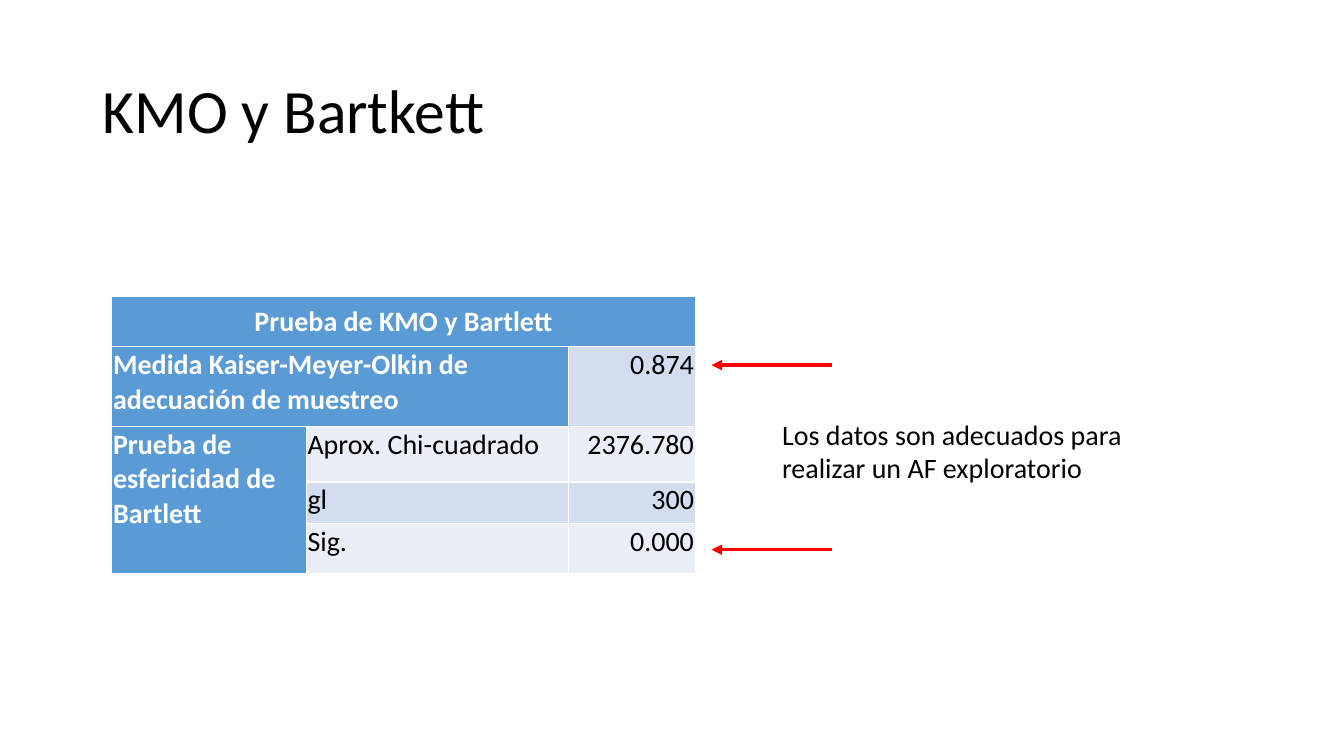
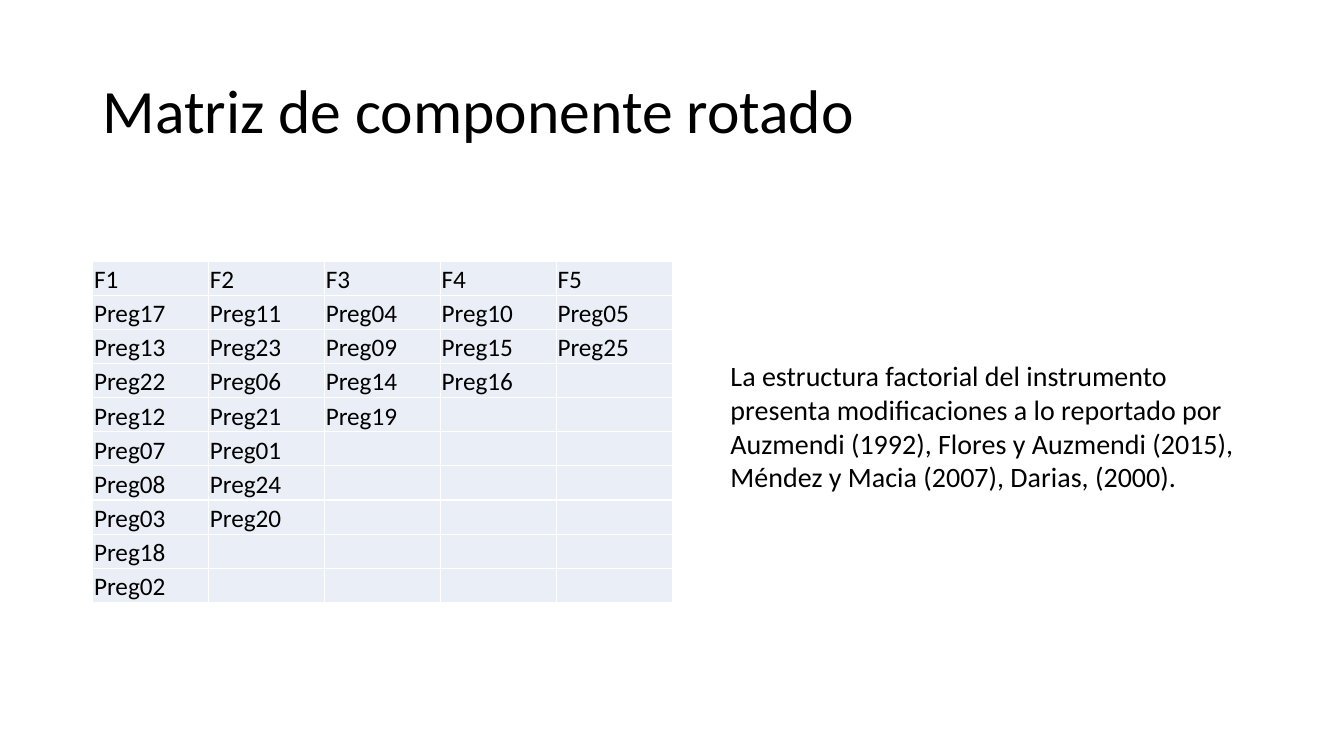
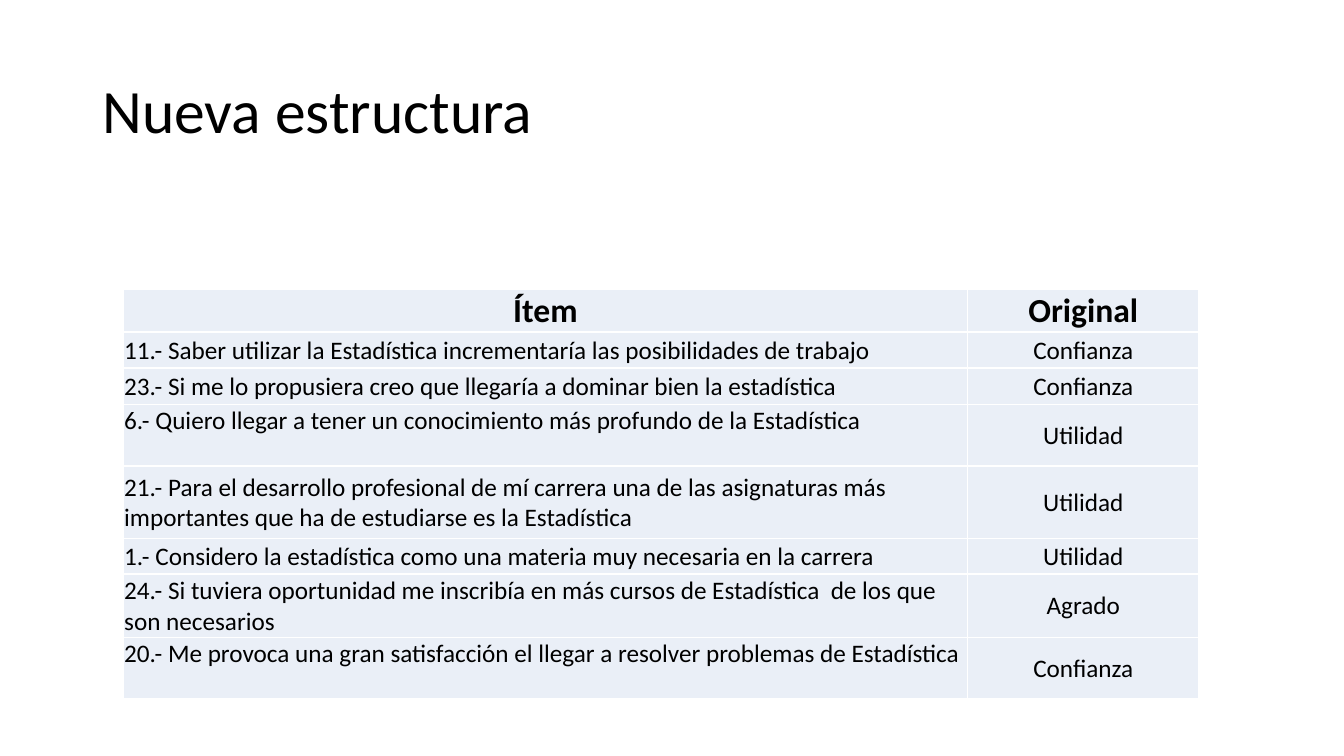
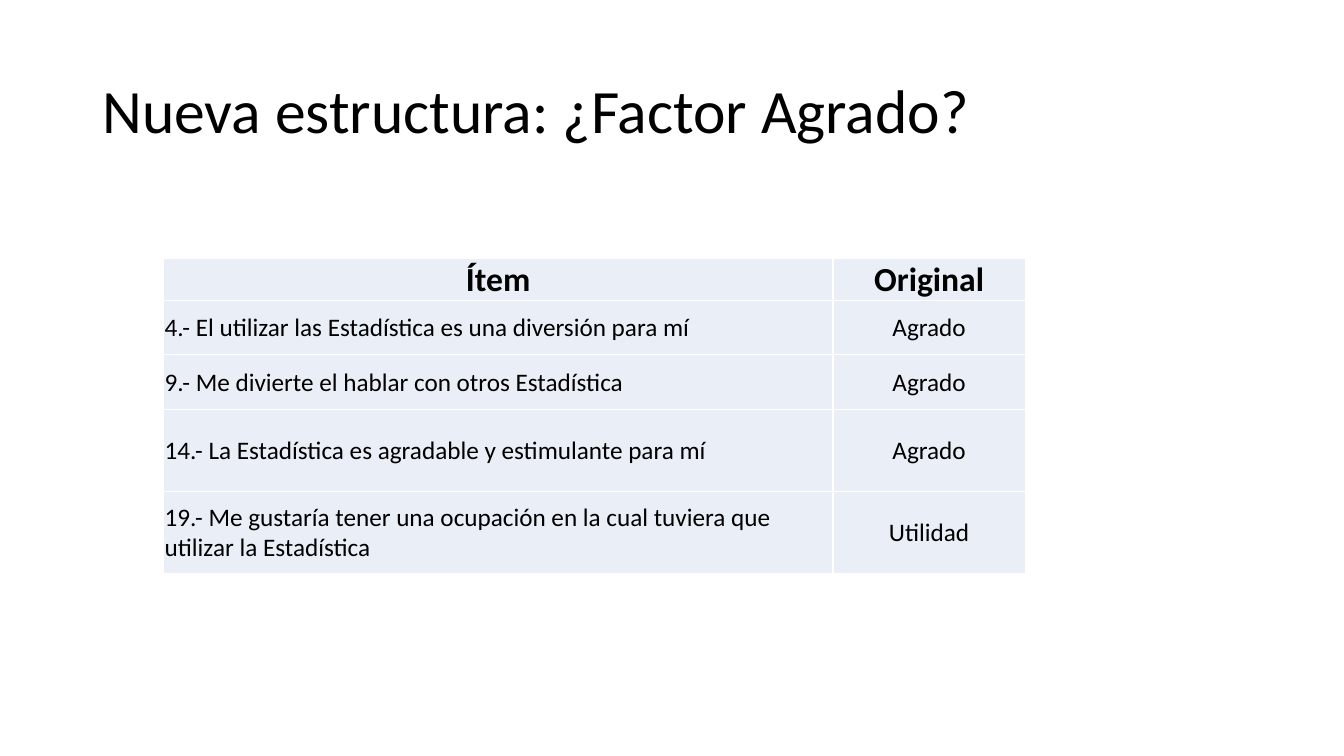
from itertools import zip_longest

from lxml.etree import SubElement
from pptx import Presentation
from pptx.dml.color import RGBColor
from pptx.enum.shapes import MSO_CONNECTOR
from pptx.enum.text import MSO_ANCHOR, PP_ALIGN
from pptx.oxml.ns import qn
from pptx.util import Cm, Pt

FONT = "Calibri"
BLACK = RGBColor(0x00, 0x00, 0x00)
WHITE = RGBColor(0xFF, 0xFF, 0xFF)
RED = RGBColor(0xFF, 0x00, 0x00)
BLUE = RGBColor(0x5B, 0x9B, 0xD5)
MID_BLUE = RGBColor(0xD2, 0xDE, 0xEF)
PALE_BLUE = RGBColor(0xEA, 0xEF, 0xF7)


def format_paragraph(p, size, color=BLACK, bold=False, align=PP_ALIGN.LEFT):
    p.alignment = align
    font = p.font
    font.name, font.size, font.bold = FONT, Pt(size), bold
    font.color.rgb = color


def add_slide(prs, title):
    s = prs.slides.add_slide(prs.slide_layouts[5])
    shape = s.shapes.title
    shape.left, shape.top, shape.width, shape.height = Cm(2.33), Cm(1.01), Cm(29.21), Cm(3.68)
    tf = shape.text_frame
    tf.text = title
    tf.vertical_anchor = MSO_ANCHOR.MIDDLE
    p = tf.paragraphs[0]
    p.line_spacing = 0.9
    format_paragraph(p, 44)
    return s


def add_table(s, left, top, widths, heights, header=False):
    frame = s.shapes.add_table(len(heights), len(widths), Cm(left), Cm(top),
                               Cm(sum(widths)), Cm(sum(heights)))
    table = frame.table
    table.first_row, table.horz_banding = header, False
    for column, width in zip(table.columns, widths):
        column.width = Cm(width)
    for row, height in zip(table.rows, heights):
        row.height = Cm(height)
    return table


def fill_cell(cell, text, size, fill=PALE_BLUE, anchor=MSO_ANCHOR.MIDDLE, **style):
    cell.margin_left = cell.margin_right = cell.margin_top = Cm(0.03)
    cell.margin_bottom = 0
    cell.vertical_anchor = anchor
    cell.fill.solid()
    cell.fill.fore_color.rgb = fill
    cell.text = text
    format_paragraph(cell.text_frame.paragraphs[0], size, **style)


def add_note(s, text, left, top, width, height):
    tf = s.shapes.add_textbox(Cm(left), Cm(top), Cm(width), Cm(height)).text_frame
    tf.word_wrap = True
    tf.text = text
    format_paragraph(tf.paragraphs[0], 20)


def add_arrow(s, x1, x2, y):
    arrow = s.shapes.add_connector(MSO_CONNECTOR.STRAIGHT, Cm(x1), Cm(y), Cm(x2), Cm(y))
    arrow.line.color.rgb = RED
    arrow.line.width = Pt(2.5)
    SubElement(arrow.line._get_or_add_ln(), qn("a:tailEnd"), type="triangle")
    SubElement(arrow._element.spPr, qn("a:effectLst"))


def add_kmo_table(s):
    table = add_table(s, 2.82, 7.47, [4.9, 6.6, 3.2], [1.27, 2.01, 1.4, 1.04, 1.27], header=True)
    for first, last in [((0, 0), (0, 2)), ((1, 0), (1, 1)), ((2, 0), (4, 0))]:
        table.cell(*first).merge(table.cell(*last))
    heading = dict(size=20, fill=BLUE, color=WHITE, bold=True)
    fill_cell(table.cell(0, 0), "Prueba de KMO y Bartlett", align=PP_ALIGN.CENTER, **heading)
    fill_cell(table.cell(1, 0), "Medida Kaiser-Meyer-Olkin de adecuación de muestreo",
              anchor=MSO_ANCHOR.TOP, **heading)
    fill_cell(table.cell(2, 0), "Prueba de esfericidad de Bartlett",
              anchor=MSO_ANCHOR.TOP, **heading)
    results = [(None, "0.874"), ("Aprox. Chi-cuadrado", "2376.780"), ("gl", "300"), ("Sig.", "0.000")]
    for row, (label, value) in enumerate(results, 1):
        fill = MID_BLUE if row % 2 else PALE_BLUE
        if label:
            fill_cell(table.cell(row, 1), label, 20, fill, MSO_ANCHOR.TOP)
        fill_cell(table.cell(row, 2), value, 20, fill, MSO_ANCHOR.TOP, align=PP_ALIGN.RIGHT)


def add_factor_table(s, factors):
    rows = list(zip_longest(*factors, fillvalue=""))
    table = add_table(s, 2.34, 6.58, [2.92] * len(factors), [0.86] * len(rows))
    for i, row in enumerate(rows):
        for j, text in enumerate(row):
            fill_cell(table.cell(i, j), text, 18, anchor=MSO_ANCHOR.BOTTOM)


def add_item_table(s, left, top, widths, heights, items, top_rows=()):
    table = add_table(s, left, top, widths, heights)
    for j, text in enumerate(("Ítem", "Original")):
        fill_cell(table.cell(0, j), text, 24, anchor=MSO_ANCHOR.BOTTOM,
                  bold=True, align=PP_ALIGN.CENTER)
    for i, (item, factor) in enumerate(items, 1):
        anchor = MSO_ANCHOR.TOP if i in top_rows else MSO_ANCHOR.MIDDLE
        fill_cell(table.cell(i, 0), item, 18, anchor=anchor)
        fill_cell(table.cell(i, 1), factor, 18, align=PP_ALIGN.CENTER)


def main():
    prs = Presentation()
    prs.slide_width, prs.slide_height = Cm(33.87), Cm(19.05)

    s = add_slide(prs, "KMO y Bartkett")
    add_kmo_table(s)
    add_note(s, "Los datos son adecuados para realizar un AF exploratorio", 19.46, 10.39, 9.45, 1.96)
    for y in (9.2, 13.85):
        add_arrow(s, 20.96, 17.93, y)

    s = add_slide(prs, "Matriz de componente rotado")
    factors = {
        "F1": "17 13 22 12 07 08 03 18 02",
        "F2": "11 23 06 21 01 24 20",
        "F3": "04 09 14 19",
        "F4": "10 15 16",
        "F5": "05 25",
    }
    add_factor_table(s, [[name] + [f"Preg{n}" for n in numbers.split()]
                         for name, numbers in factors.items()])
    add_note(s, "La estructura factorial del instrumento presenta modificaciones a lo reportado por "
                "Auzmendi (1992), Flores y Auzmendi (2015), Méndez y Macia (2007), Darias, (2000).",
             18.16, 8.92, 13.39, 3.68)

    s = add_slide(prs, "Nueva estructura")
    add_item_table(s, 3.1, 7.3, [21.29, 5.82], [1.06, 0.91, 0.91, 1.56, 1.83, 0.89, 1.59, 1.56], [
        ("11.- Saber utilizar la Estadística incrementaría las posibilidades de trabajo", "Confianza"),
        ("23.- Si me lo propusiera creo que llegaría a dominar bien la estadística", "Confianza"),
        ("6.- Quiero llegar a tener un conocimiento más profundo de la Estadística", "Utilidad"),
        ("21.- Para el desarrollo profesional de mí carrera una de las asignaturas más "
         "importantes que ha de estudiarse es la Estadística", "Utilidad"),
        ("1.- Considero la estadística como una materia muy necesaria en la carrera", "Utilidad"),
        ("24.- Si tuviera oportunidad me inscribía en más cursos de Estadística  de los que "
         "son necesarios", "Agrado"),
        ("20.- Me provoca una gran satisfacción el llegar a resolver problemas de Estadística",
         "Confianza"),
    ], top_rows=(3, 7))

    s = add_slide(prs, "Nueva estructura: ¿Factor Agrado?")
    add_item_table(s, 4.12, 6.5, [16.87, 4.85], [1.06, 1.38, 1.38, 2.06, 2.06], [
        ("4.- El utilizar las Estadística es una diversión para mí", "Agrado"),
        ("9.- Me divierte el hablar con otros Estadística", "Agrado"),
        ("14.- La Estadística es agradable y estimulante para mí", "Agrado"),
        ("19.- Me gustaría tener una ocupación en la cual tuviera que utilizar la Estadística",
         "Utilidad"),
    ])

    prs.save("out.pptx")


if __name__ == "__main__":
    main()
